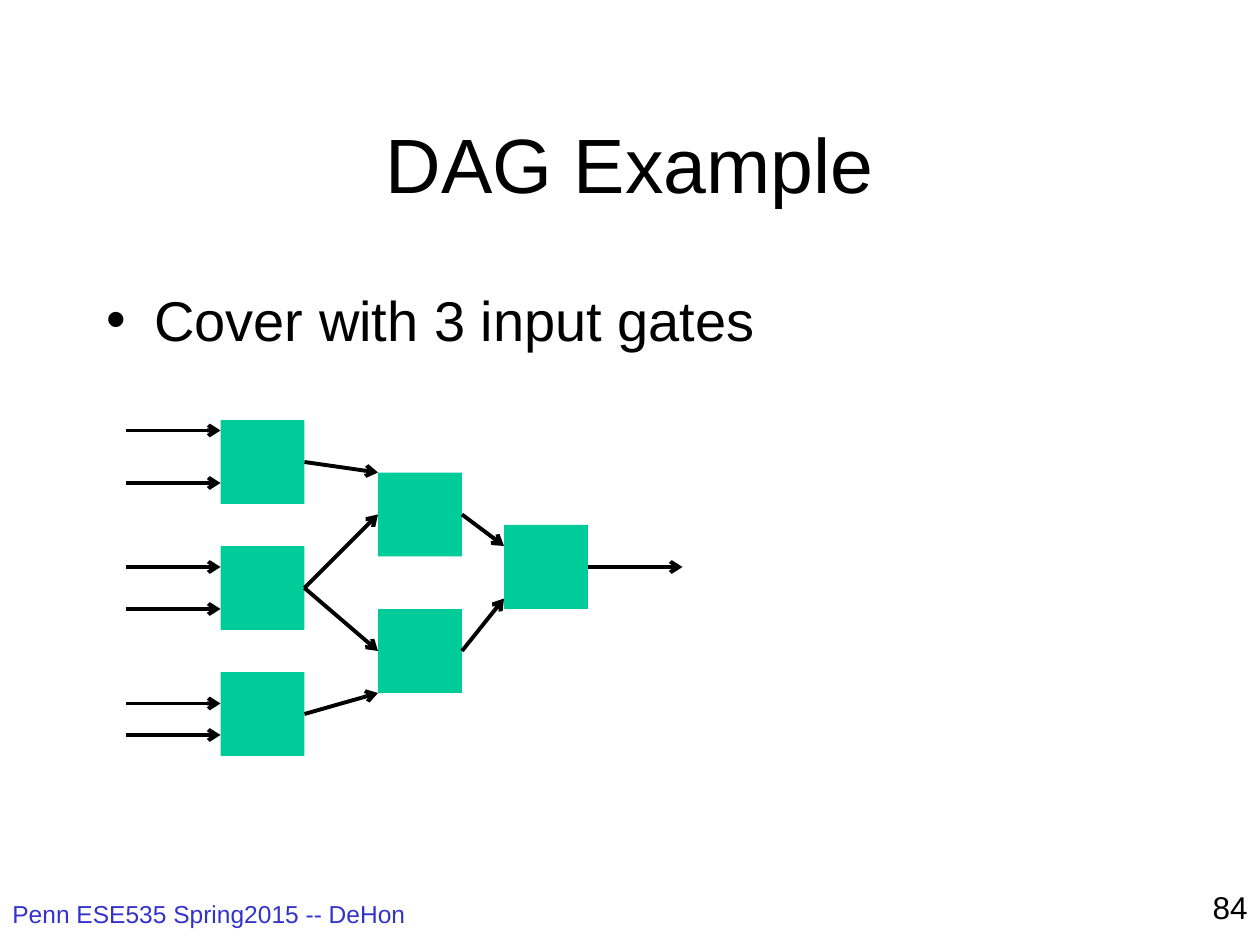
from dataclasses import dataclass
from typing import Optional

from lxml.etree import SubElement as Sub
from pptx import Presentation
from pptx.dml.color import RGBColor as Rgb
from pptx.enum.shapes import MSO_CONNECTOR as Conn, MSO_SHAPE as Kind
from pptx.enum.text import MSO_ANCHOR as Anchor, PP_ALIGN as Align
from pptx.oxml.ns import qn
from pptx.util import Emu, Pt

PX = 9525  # EMU in one px, 96 px to the inch
SIDE = 64
INK = {"text": "000000", "foot": "3333CC", "gate": "00CC99", "wire": "000000"}
TOP, LEFT, RIGHT = 0, 1, 3


@dataclass
class Label:
    text: str
    x: int
    y: int
    w: int
    h: int
    size: int
    ink: str = "text"
    align: Align = Align.LEFT
    anchor: Anchor = Anchor.TOP
    bullet: bool = False


@dataclass
class Gate:
    x: int
    y: int

    @property
    def mid(self) -> int:
        return self.y + SIDE // 2

    @property
    def end(self) -> int:
        return self.x + SIDE


@dataclass
class Wire:
    """Arrow between gates; port is the height on the target's left side."""
    src: Optional[str]
    dst: Optional[str]
    port: int = SIDE // 2


LABELS = [
    Label("DAG Example", 72, 64, 816, 120, 44,
          align=Align.CENTER, anchor=Anchor.MIDDLE),
    Label("Cover with 3 input gates", 72, 213, 816, 427, 32, bullet=True),
    Label("Penn ESE535 Spring2015 -- DeHon", 0, 680, 368, 40, 14, "foot"),
    Label("84", 760, 672, 200, 48, 18, align=Align.RIGHT),
]
GATES = {name: Gate(168, 320 + 96 * i) for i, name in enumerate("abc")}
GATES |= {"d": Gate(288, 360), "e": Gate(288, 464), "f": Gate(384, 400)}
INPUTS = {"a": (8, 48), "b": (16, 48), "c": (24, 48)}
WIRES = [
    Wire("b", "d"), Wire("b", "e"),
    Wire("d", "f", 16), Wire("e", "f", 56),
    Wire("a", "d", 0), Wire("c", "e", SIDE),
    *(Wire(None, name, port) for name, ports in INPUTS.items() for port in ports),
    Wire("f", None),
]
REACH = 72  # length of the wires that enter and leave the graph


def px(*nums: int) -> list[Emu]:
    return [Emu(n * PX) for n in nums]


def put_text(slide, label: Label) -> None:
    box = slide.shapes.add_textbox(*px(label.x, label.y, label.w, label.h))
    frame = box.text_frame
    frame.word_wrap = True
    frame.vertical_anchor = label.anchor
    para = frame.paragraphs[0]
    para.alignment = label.align
    if label.bullet:
        props = para._p.get_or_add_pPr()
        props.set("marL", str(36 * PX))
        props.set("indent", str(-36 * PX))
        Sub(props, qn("a:buFont"), typeface="Arial")
        Sub(props, qn("a:buChar"), char="•")
    run = para.add_run()
    run.text = label.text
    run.font.name = "Arial"
    run.font.size = Pt(label.size)
    run.font.color.rgb = Rgb.from_string(INK[label.ink])


def put_gate(slide, gate: Gate):
    box = slide.shapes.add_shape(Kind.RECTANGLE, *px(gate.x, gate.y, SIDE, SIDE))
    box.shadow.inherit = False
    box.fill.solid()
    box.fill.fore_color.rgb = Rgb.from_string(INK["gate"])
    box.line.fill.background()
    return box


def put_wire(slide, wire: Wire, boxes: dict) -> None:
    src, dst = GATES.get(wire.src), GATES.get(wire.dst)
    if dst:
        x2, y2 = dst.x, dst.y + wire.port
    else:
        x2, y2 = src.end + REACH, src.mid
    x1, y1 = (src.end, src.mid) if src else (x2 - REACH, y2)
    line = slide.shapes.add_connector(Conn.STRAIGHT, *px(x1, y1, x2, y2))
    if src:
        line.begin_connect(boxes[wire.src], RIGHT)
    if dst and y2 == dst.mid:
        line.end_connect(boxes[wire.dst], LEFT)
    line.line.color.rgb = Rgb.from_string(INK["wire"])
    line.line.width = Pt(2.25)
    Sub(line.line._get_or_add_ln(), qn("a:tailEnd"), type="arrow")
    Sub(line._element.spPr, qn("a:effectLst"))


def main() -> None:
    deck = Presentation()
    deck.slide_width, deck.slide_height = px(960, 720)
    slide = deck.slides.add_slide(deck.slide_layouts[6])
    for label in LABELS:
        put_text(slide, label)
    boxes = {name: put_gate(slide, gate) for name, gate in GATES.items()}
    for wire in WIRES:
        put_wire(slide, wire, boxes)
    deck.save("out.pptx")


if __name__ == "__main__":
    main()
